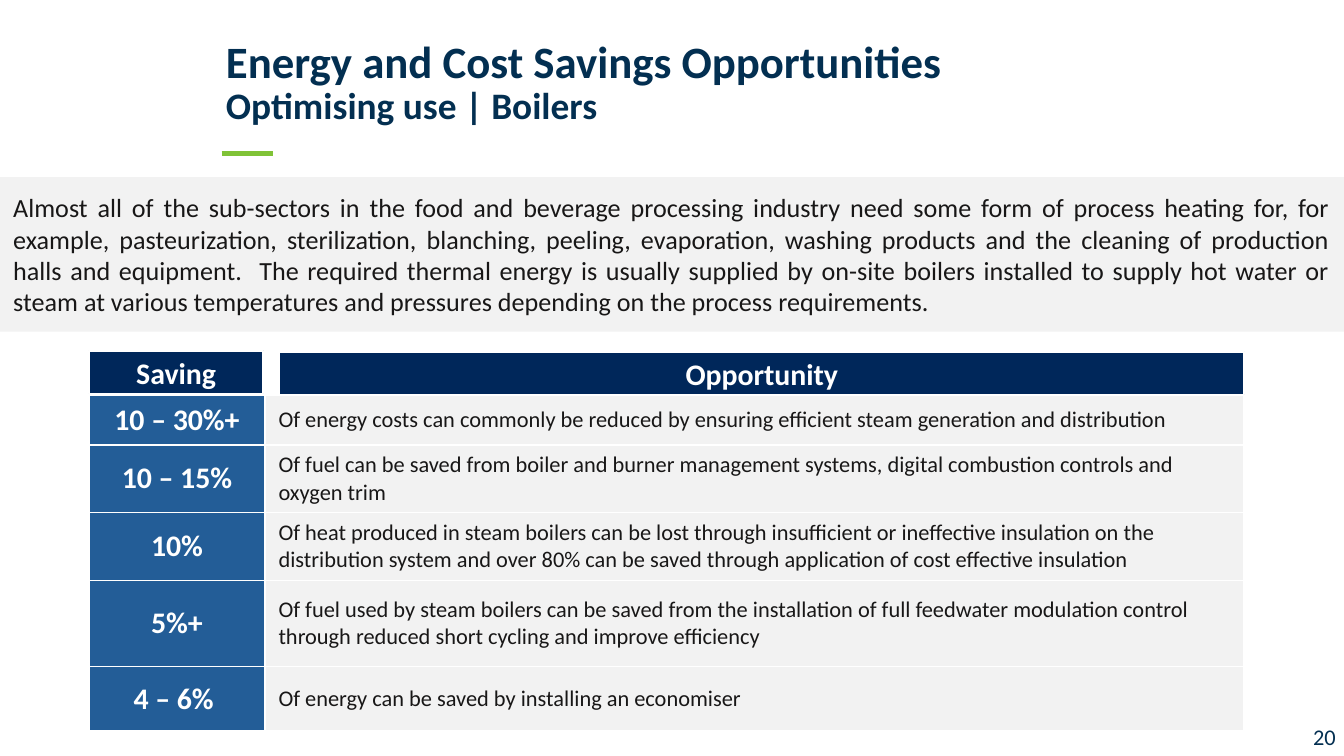
from lxml import etree
from pptx import Presentation
from pptx import util as u
from pptx.dml.color import RGBColor
from pptx.enum import shapes, text
from pptx.oxml import ns

Cm, Pt = u.Cm, u.Pt
FONT = "Calibri"
TITLE_BLUE = RGBColor(0x03, 0x2F, 0x51)
HEADER_NAVY = RGBColor(0x00, 0x27, 0x5A)
SAVING_BLUE = RGBColor(0x23, 0x5D, 0x97)
ACCENT_GREEN = RGBColor(0x80, 0xC3, 0x37)
PALE_GREY = RGBColor(0xF2, 0xF2, 0xF2)
BODY_BLACK = RGBColor(0x18, 0x17, 0x17)
WHITE = RGBColor(0xFF, 0xFF, 0xFF)

INTRO = (
    "Almost all of the sub-sectors in the food and beverage processing industry need "
    "some form of process heating for, for example, pasteurization, sterilization, "
    "blanching, peeling, evaporation, washing products and the cleaning of production "
    "halls and equipment.  The required thermal energy is usually supplied by on-site "
    "boilers installed to supply hot water or steam at various temperatures and "
    "pressures depending on the process requirements. "
)

# Saving, opportunity, row height in cm
OPPORTUNITIES = [
    ("10 – 30%+", "Of energy costs can commonly be reduced by ensuring efficient steam "
     "generation and distribution", 0.94),
    ("10 – 15%", "Of fuel can be saved from boiler and burner management systems, digital "
     "combustion controls and oxygen trim", 1.28),
    ("10%", "Of heat produced in steam boilers can be lost through insufficient or "
     "ineffective insulation on the distribution system and over 80% can be saved "
     "through application of cost effective insulation", 1.28),
    ("5%+", "Of fuel used by steam boilers can be saved from the installation of full "
     "feedwater modulation control through reduced short cycling and improve efficiency",
     1.63),
    ("4 – 6% ", "Of energy can be saved by installing an economiser", 1.22),
]
TABLE_LEFT, TABLE_TOP = 1.68, 7.47
COLUMN_WIDTHS = (3.33, 18.49)


def style_font(font, size, color, bold=False):
    font.name, font.size, font.bold = FONT, Pt(size), bold
    font.color.rgb = color


def fill_text(frame, content, size, color, align, bold=False):
    frame.text = content
    frame.word_wrap = True
    frame.vertical_anchor = text.MSO_ANCHOR.MIDDLE
    paragraph = frame.paragraphs[0]
    paragraph.alignment = align
    style_font(paragraph.runs[0].font, size, color, bold)


def remove_insets(frame):
    frame.margin_left = frame.margin_right = 0
    frame.margin_top = frame.margin_bottom = 0


def add_title(slide):
    title = slide.shapes.title
    title.left, title.top, title.width, title.height = Cm(4.27), Cm(0.64), Cm(20.4), Cm(1.78)
    frame = title.text_frame
    remove_insets(frame)
    frame.auto_size = text.MSO_AUTO_SIZE.NONE
    frame.vertical_anchor = text.MSO_ANCHOR.BOTTOM
    heading = frame.paragraphs[0]
    heading.text = "Energy and Cost Savings Opportunities \vOptimising use | Boilers"
    heading.alignment = text.PP_ALIGN.LEFT
    heading.line_spacing = 0.9
    for run, size in zip(heading.runs, (24, 20)):
        style_font(run.font, size, TITLE_BLUE, True)


def add_accent(slide):
    accent = slide.shapes.add_connector(
        shapes.MSO_CONNECTOR.STRAIGHT, Cm(4.19), Cm(2.9), Cm(5.16), Cm(2.9))
    accent.line.color.rgb = ACCENT_GREEN
    accent.line.width = Pt(3)
    etree.SubElement(accent._element.spPr, ns.qn("a:effectLst"))


def add_panel(slide, left, top, width, height, fill):
    panel = slide.shapes.add_shape(
        shapes.MSO_SHAPE.RECTANGLE, Cm(left), Cm(top), Cm(width), Cm(height))
    panel.shadow.inherit = False
    panel.fill.solid()
    panel.fill.fore_color.rgb = fill
    panel.line.fill.background()
    return panel


def add_intro(slide):
    intro = add_panel(slide, 0, 3.35, 25.4, 2.92, PALE_GREY)
    fill_text(intro.text_frame, INTRO, 14, BODY_BLACK, text.PP_ALIGN.JUSTIFY)


def add_column_header(slide, label, left, top, width):
    header = add_panel(slide, left, top, width, 0.81, HEADER_NAVY)
    header.line.color.rgb = WHITE
    header.line.width = Pt(1)
    fill_text(header.text_frame, label, 16, WHITE, text.PP_ALIGN.CENTER, True)


def add_cell_borders(cell):
    properties = cell._tc.get_or_add_tcPr()
    for side in ("lnL", "lnR", "lnT", "lnB"):
        border = etree.SubElement(properties, ns.qn(f"a:{side}"), w=str(Pt(1)))
        fill = etree.SubElement(border, ns.qn("a:solidFill"))
        etree.SubElement(fill, ns.qn("a:srgbClr"), val=str(WHITE))


def fill_cell(cell, content, size, color, align, fill, bold=False):
    add_cell_borders(cell)
    cell.fill.solid()
    cell.fill.fore_color.rgb = fill
    cell.vertical_anchor = text.MSO_ANCHOR.MIDDLE
    cell.text = content
    paragraph = cell.text_frame.paragraphs[0]
    paragraph.alignment = align
    style_font(paragraph.runs[0].font, size, color, bold)


def add_savings_table(slide):
    height = sum(row_height for _, _, row_height in OPPORTUNITIES)
    table = slide.shapes.add_table(
        len(OPPORTUNITIES), len(COLUMN_WIDTHS), Cm(TABLE_LEFT), Cm(TABLE_TOP),
        Cm(sum(COLUMN_WIDTHS)), Cm(height)).table
    table.first_row = table.horz_banding = False
    for column, width in zip(table.columns, COLUMN_WIDTHS):
        column.width = Cm(width)
    for row, (saving, opportunity, row_height) in zip(table.rows, OPPORTUNITIES):
        row.height = Cm(row_height)
        saving_cell, opportunity_cell = row.cells
        fill_cell(saving_cell, saving, 16, WHITE, text.PP_ALIGN.CENTER, SAVING_BLUE, True)
        fill_cell(opportunity_cell, opportunity, 12, BODY_BLACK, text.PP_ALIGN.LEFT, PALE_GREY)


def add_page_number(slide):
    number = slide.shapes.add_textbox(Cm(24.66), Cm(13.54), Cm(0.74), Cm(0.76))
    remove_insets(number.text_frame)
    fill_text(number.text_frame, "20", 12, TITLE_BLUE, text.PP_ALIGN.CENTER)


def main():
    deck = Presentation()
    deck.slide_width, deck.slide_height = Cm(25.4), Cm(14.29)
    slide = deck.slides.add_slide(deck.slide_layouts.get_by_name("Title Only"))
    add_accent(slide)
    add_page_number(slide)
    add_title(slide)
    add_intro(slide)
    add_column_header(slide, "Opportunity", 5.28, 6.65, 18.24)
    add_savings_table(slide)
    add_column_header(slide, "Saving", TABLE_LEFT, 6.63, 3.3)
    deck.save("out.pptx")


if __name__ == "__main__":
    main()
